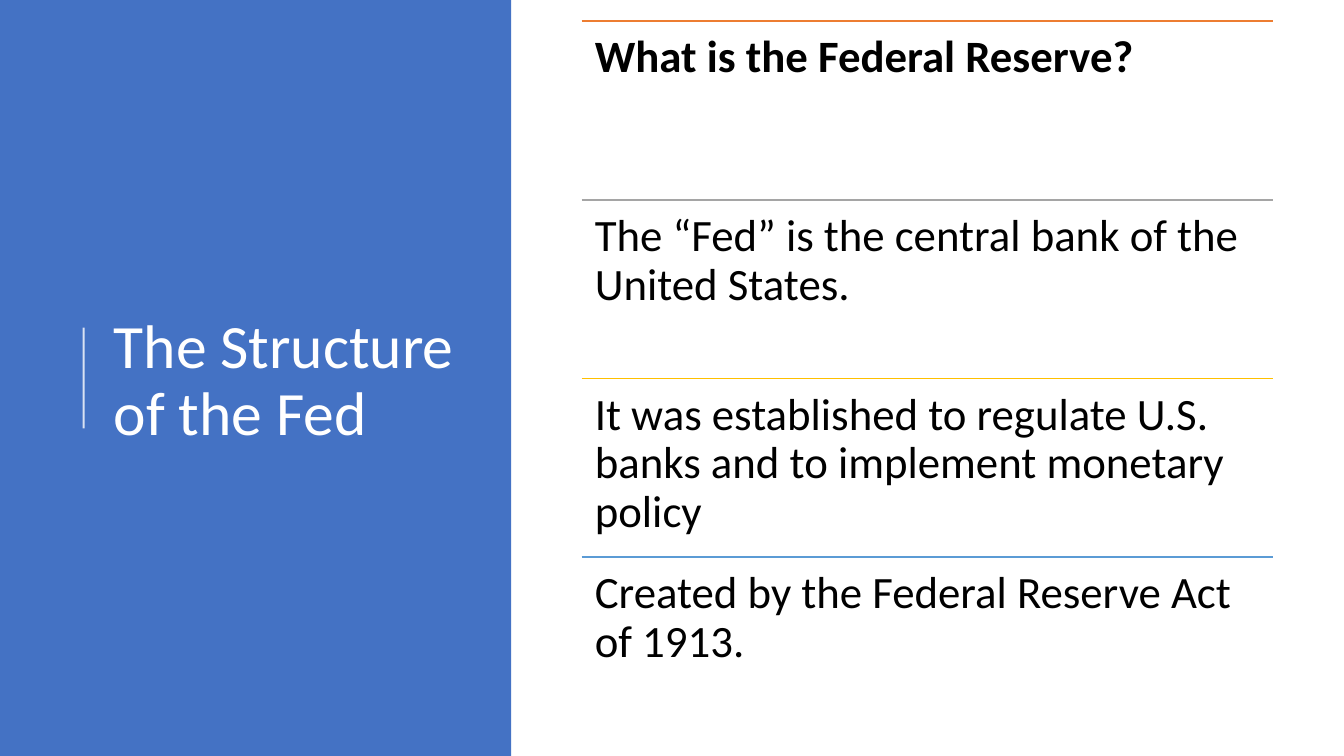
from dataclasses import dataclass

from lxml import etree
from pptx import Presentation
from pptx.dml.color import RGBColor as Rgb
from pptx.enum.shapes import MSO_CONNECTOR as Connector
from pptx.enum.shapes import MSO_SHAPE as Shape
from pptx.enum.text import MSO_ANCHOR as Anchor
from pptx.oxml.ns import qn
from pptx.util import Inches, Pt


@dataclass(frozen=True)
class Theme:
    font: str = "Calibri"
    title_size: int = 44
    body_size: int = 32
    panel: str = "4472C4"
    light: str = "FFFFFF"
    dark: str = "000000"
    rules: tuple = ("ED7D31", "A5A5A5", "FFC000", "5B9BD5")


@dataclass(frozen=True)
class Box:
    """A region of the slide, in inches."""
    left: float
    top: float
    width: float
    height: float

    def lengths(self):
        return [Inches(n) for n in (self.left, self.top, self.width, self.height)]


THEME = Theme()
STATEMENTS = (
    "What is the Federal Reserve?",
    "The “Fed” is the central bank of the United States.",
    "It was established to regulate U.S. banks and to implement monetary policy",
    "Created by the Federal Reserve Act of 1913.",
)


def add_line(page, start, end, color, weight):
    line = page.shapes.add_connector(
        Connector.STRAIGHT, *[Inches(n) for n in (*start, *end)])
    line.line.color.rgb = Rgb.from_string(color)
    line.line.width = Pt(weight)
    etree.SubElement(line._element.spPr, qn("a:effectLst"))
    return line


def add_text(page, box, text, size, color, anchor=Anchor.TOP, bold=False):
    frame = page.shapes.add_textbox(*box.lengths()).text_frame
    frame.word_wrap = True
    frame.vertical_anchor = anchor
    para = frame.paragraphs[0]
    para.text = text
    para.line_spacing = 0.9
    para.font.name = THEME.font
    para.font.size = Pt(size)
    para.font.bold = bold
    para.font.color.rgb = Rgb.from_string(color)
    return frame


def add_title_panel(page, box, title):
    panel = page.shapes.add_shape(Shape.RECTANGLE, *box.lengths())
    panel.shadow.inherit = False
    panel.fill.solid()
    panel.fill.fore_color.rgb = Rgb.from_string(THEME.panel)
    panel.line.fill.background()

    title_box = Box(box.left + 1.03, box.top + 0.78, 3.69, 6.02)
    add_text(page, title_box, title, THEME.title_size, THEME.light, Anchor.MIDDLE)

    accent_x, middle = box.left + 0.83, box.top + box.height / 2
    accent = add_line(page, (accent_x, middle + 0.5), (accent_x, middle - 0.5),
                      THEME.light, 1.5)
    color = accent.line._ln.find(".//" + qn("a:srgbClr"))
    etree.SubElement(color, qn("a:alpha"), val="80000")


def add_statements(page, box, statements):
    """Stack the statements in equal rows, each under its own coloured rule."""
    row_height = box.height / len(statements)
    for index, (text, color) in enumerate(zip(statements, THEME.rules)):
        row = Box(box.left, box.top + index * row_height, box.width, row_height)
        add_line(page, (row.left, row.top), (row.left + row.width, row.top), color, 1)
        frame = add_text(page, row, text, THEME.body_size, THEME.dark, bold=index == 0)
        frame.margin_left = frame.margin_right = Inches(0.13)
        frame.margin_top = frame.margin_bottom = Inches(0.13)


def main():
    deck = Presentation()
    deck.slide_width, deck.slide_height = Inches(13.33), Inches(7.5)
    page = deck.slides.add_slide(deck.slide_layouts[6])
    add_title_panel(page, Box(0, 0, 5.07, 7.5), "The Structure of the Fed")
    add_statements(page, Box(5.77, 0.21, 6.86, 7.09), STATEMENTS)
    deck.save("out.pptx")


if __name__ == "__main__":
    main()
